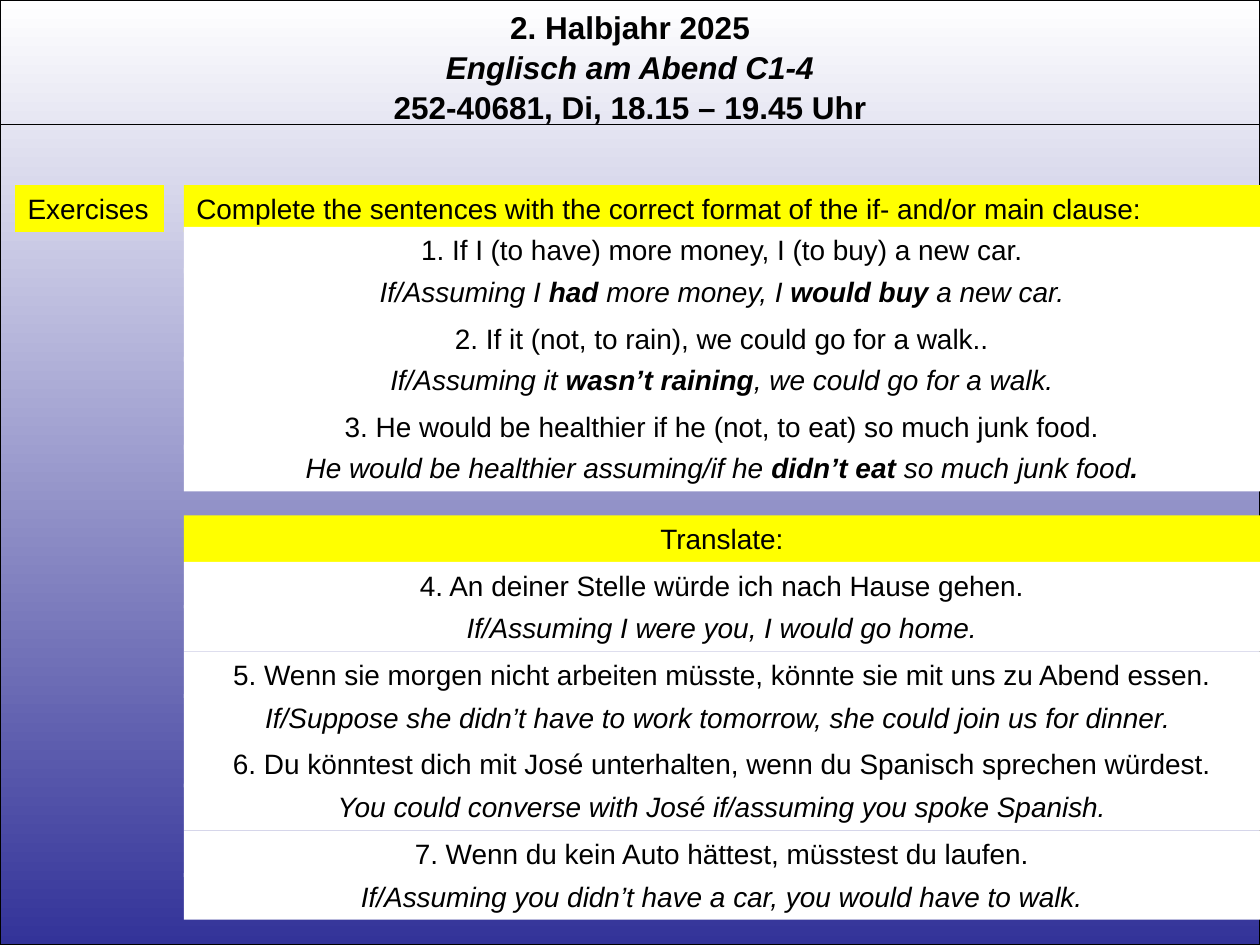
from dataclasses import dataclass

from lxml.etree import SubElement
from pptx import Presentation
from pptx.dml.color import RGBColor
from pptx.enum.shapes import MSO_CONNECTOR, MSO_SHAPE
from pptx.enum.text import MSO_ANCHOR, MSO_AUTO_SIZE, PP_ALIGN
from pptx.oxml.ns import qn
from pptx.util import Inches, Pt


@dataclass(frozen=True)
class Theme:
    """Colours, font and type sizes of the slide."""
    font: str = "Arial"
    title_size: int = 18
    body_size: int = 16
    black: RGBColor = RGBColor(0, 0, 0)
    white: RGBColor = RGBColor(255, 255, 255)
    yellow: RGBColor = RGBColor(255, 255, 0)
    indigo: RGBColor = RGBColor(0x33, 0x33, 0x99)


THEME = Theme()
ROW_LEFT, ROW_WIDTH, ROW_HEIGHT = 1.46, 8.54, 0.37

TITLE = [
    ("2. Halbjahr 2025", False),
    ("Englisch am Abend C1-4", True),
    ("252-40681, Di, 18.15 – 19.45 Uhr", False),
]
COMPLETE = [
    ("1. If I (to have) more money, I (to buy) a new car.",
     "If/Assuming I *had* more money, I *would buy *a new car."),
    ("2. If it (not, to rain), we could go for a walk..",
     "If/Assuming it *wasn’t raining*, we could go for a walk."),
    ("3. He would be healthier if he (not, to eat) so much junk food.",
     "He would be healthier assuming/if he *didn’t eat *so much junk food*.*"),
]
TRANSLATE = [
    ("4. An deiner Stelle würde ich nach Hause gehen.",
     "If/Assuming I were you, I would go home."),
    ("5. Wenn sie morgen nicht arbeiten müsste, könnte sie mit uns zu Abend essen.",
     "If/Suppose she didn’t have to work tomorrow, she could join us for dinner. "),
    ("6. Du könntest dich mit José unterhalten, wenn du Spanisch sprechen würdest.",
     "You could converse with José if/assuming you spoke Spanish."),
    ("7. Wenn du kein Auto hättest, müsstest du laufen.",
     "If/Assuming you didn’t have a car, you would have to walk."),
]


def write(p, text, size=THEME.body_size, bold=False, italic=False,
          align=PP_ALIGN.CENTER, spacing=None):
    """Fill a paragraph; parts between asterisks are bold."""
    p.alignment = align
    p.line_spacing = spacing
    for i, part in enumerate(text.split("*")):
        if part:
            r = p.add_run()
            r.text = part
            r.font.name, r.font.size = THEME.font, Pt(size)
            r.font.bold, r.font.italic = bold or i % 2 == 1, italic
            r.font.color.rgb = THEME.black


def set_frame(tf):
    """Make a text frame wrap, start at the top and grow with its text."""
    tf.word_wrap = True
    tf.vertical_anchor = MSO_ANCHOR.TOP
    tf.auto_size = MSO_AUTO_SIZE.SHAPE_TO_FIT_TEXT


def add_rect(s, left, top, width, height):
    """Add a rectangle without a shadow."""
    sp = s.shapes.add_shape(MSO_SHAPE.RECTANGLE, Inches(left), Inches(top),
                            Inches(width), Inches(height))
    sp.shadow.inherit = False
    return sp


def add_backdrop(s):
    """Put the outlined gradient behind the title."""
    sp = add_rect(s, 0, 0, 10, 7.5)
    sp.fill.gradient()
    sp.fill.gradient_angle = 270
    for stop, colour in zip(sp.fill.gradient_stops, (THEME.white, THEME.indigo)):
        stop.color.rgb = colour
    sp.line.color.rgb = THEME.black
    sp.line.width = Pt(0.75)
    s.shapes.title.element.addprevious(sp.element)


def add_title(s):
    """Place and fill the three-line title."""
    sp = s.shapes.title
    sp.left, sp.top, sp.width, sp.height = map(Inches, (0, 0, 10, 1.01))
    tf = sp.text_frame
    set_frame(tf)
    for i, (text, italic) in enumerate(TITLE):
        p = tf.paragraphs[0] if i == 0 else tf.add_paragraph()
        write(p, text, size=THEME.title_size, bold=True, italic=italic, spacing=1.05)


def add_rule(s, top):
    """Draw the line below the title."""
    line = s.shapes.add_connector(MSO_CONNECTOR.STRAIGHT, 0, Inches(top),
                                  Inches(10), Inches(top))
    line.line.color.rgb = THEME.black
    line.line.width = Pt(0.75)
    SubElement(line.element.spPr, qn("a:effectLst"))


def add_row(s, top, text, left=ROW_LEFT, width=ROW_WIDTH, fill=THEME.white, **fmt):
    """Add one filled row of text."""
    sp = add_rect(s, left, top, width, ROW_HEIGHT)
    sp.fill.solid()
    sp.fill.fore_color.rgb = fill
    sp.line.fill.background()
    set_frame(sp.text_frame)
    write(sp.text_frame.paragraphs[0], text, **fmt)


def add_exercises(s, top, pitch, pairs):
    """Stack questions, each with its answer in italics."""
    for i, (question, answer) in enumerate(pairs):
        y = top + i * pitch
        add_row(s, y, question)
        add_row(s, y + pitch - ROW_HEIGHT, answer, italic=True)


def main():
    """Build and save the slide."""
    prs = Presentation()
    prs.slide_width, prs.slide_height = Inches(10), Inches(7.5)
    s = prs.slides.add_slide(prs.slide_layouts[5])
    add_backdrop(s)
    add_title(s)
    add_rule(s, 0.99)
    add_row(s, 1.47, "Exercises", left=0.12, width=1.18, fill=THEME.yellow,
            align=PP_ALIGN.LEFT)
    add_row(s, 1.47, "Complete the sentences with the correct format of the "
            "if- and/or main clause:", fill=THEME.yellow, align=PP_ALIGN.LEFT)
    add_exercises(s, 1.8, 0.7, COMPLETE)
    add_row(s, 4.09, "Translate:", fill=THEME.yellow)
    add_exercises(s, 4.46, 0.71, TRANSLATE)
    prs.save("out.pptx")


if __name__ == "__main__":
    main()
